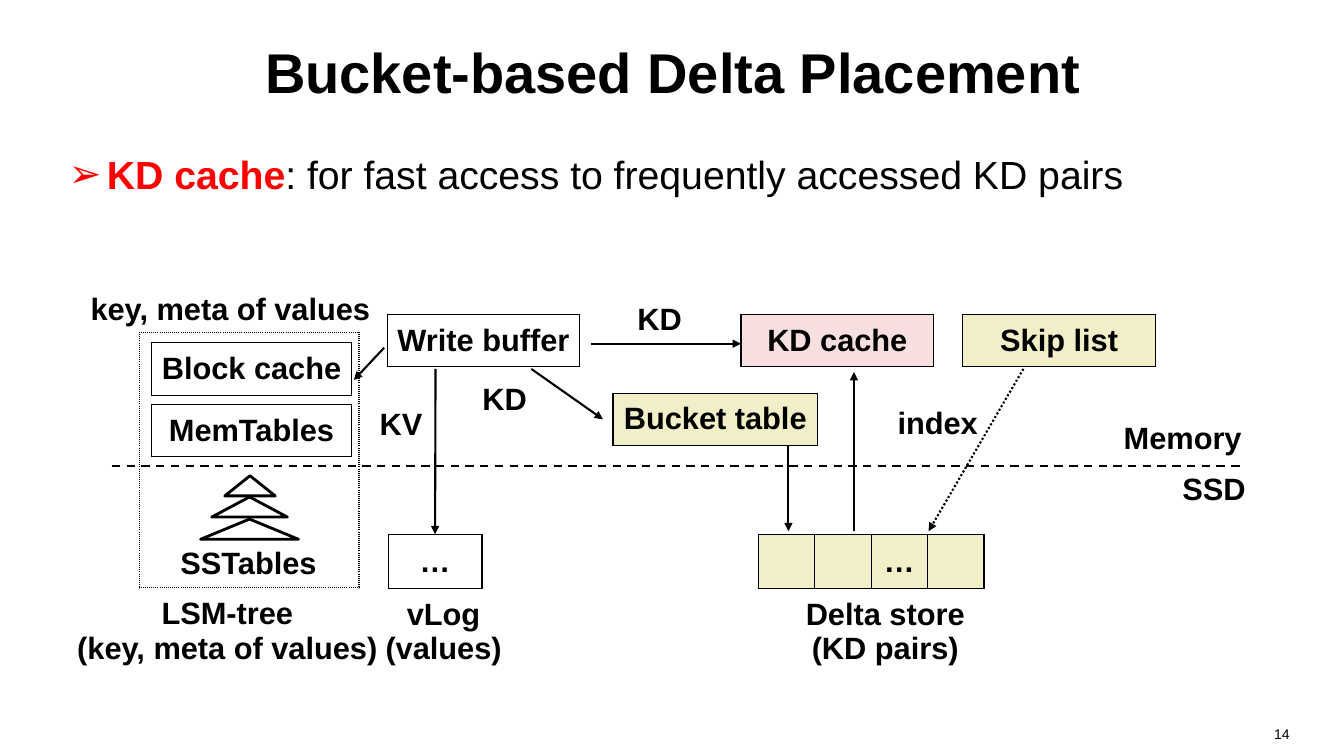
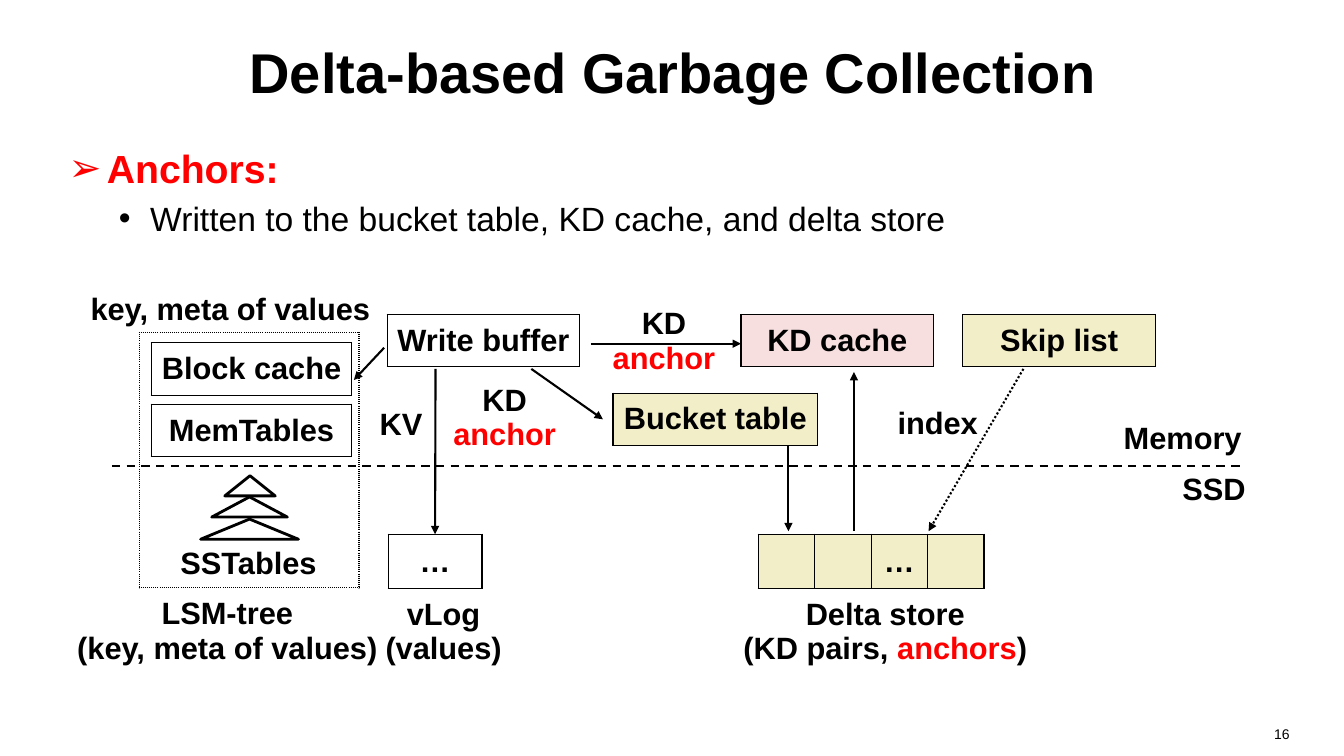
from pptx import Presentation
from pptx.dml.color import RGBColor
from pptx.enum.dml import MSO_LINE
from pptx.enum.shapes import MSO_CONNECTOR, MSO_SHAPE
from pptx.enum.text import MSO_ANCHOR, MSO_AUTO_SIZE, PP_ALIGN
from pptx.oxml import parse_xml
from pptx.oxml.ns import nsdecls
from pptx.util import Emu, Pt

STRAIGHT = MSO_CONNECTOR.STRAIGHT
TRIANGLE = MSO_SHAPE.ISOSCELES_TRIANGLE
DASH, DOTTED = MSO_LINE.DASH, MSO_LINE.ROUND_DOT
LEFT, CENTER, RIGHT = PP_ALIGN.LEFT, PP_ALIGN.CENTER, PP_ALIGN.RIGHT
MIDDLE, TOP = MSO_ANCHOR.MIDDLE, MSO_ANCHOR.TOP
NO_AUTOFIT = MSO_AUTO_SIZE.NONE

FONT = "Arial"
BLACK, RED, PINK, CREAM = "000000", "FF0000", "F7DFDF", "F2EEC8"
EMU_PER_PX = 9144
TITLE_AND_CONTENT = 1
TOP_SIDE = 0
BOX_TOP, BOX_WIDTH, BOX_HEIGHT = 312, 191, 52
LABEL_HEIGHT, CAPTION_HEIGHT = 37, 73
STORE_TOP, STORE_HEIGHT = 530, 54


def px(length):
    """Turn px into EMU."""
    return Emu(length * EMU_PER_PX)


def rgb(color):
    """Turn a hex string into a colour."""
    return RGBColor.from_string(color)


def place(shape, left, top, width, height):
    """Set the position and size of a shape."""
    shape.left, shape.top = px(left), px(top)
    shape.width, shape.height = px(width), px(height)


def write(para, text, size=22, bold=True, accent="", align=CENTER):
    """Write text into a paragraph, with the accent words in bold red."""
    para.alignment = align
    before, marked, after = text.partition(accent) if accent else (text, "", "")
    for part, color, weight in ((before, BLACK, bold), (marked, RED, True),
                                (after, BLACK, bold)):
        if part:
            span = para.add_run()
            span.text = part
            span.font.name, span.font.size = FONT, Pt(size)
            span.font.bold = weight
            span.font.color.rgb = rgb(color)


def add_bullet(para, mark, margin, hang):
    """Give a paragraph a bullet with a hanging indent."""
    properties = para._p.get_or_add_pPr()
    properties.set("marL", str(px(margin)))
    properties.set("indent", str(-px(hang)))
    properties.append(parse_xml(f'<a:buFont {nsdecls("a")} typeface="{FONT}"/>'))
    properties.append(parse_xml(f'<a:buChar {nsdecls("a")} char="{mark}"/>'))


def set_borders(cell, border):
    """Draw the four cell borders, or clear them when border is None."""
    if border:
        content = (f'<a:solidFill><a:srgbClr val="{BLACK}"/></a:solidFill>'
                   f'<a:prstDash val="{border}"/>')
    else:
        content = "<a:noFill/>"
    properties = cell._tc.get_or_add_tcPr()
    for index, side in enumerate("LRTB"):
        properties.insert(index, parse_xml(
            f'<a:ln{side} {nsdecls("a")} w="{Pt(1)}">{content}</a:ln{side}>'))


def add_cells(page, texts, left, top, width, height,
              fill=None, border="solid", accent=""):
    """Add a one-row table with one cell per text."""
    frame = page.shapes.add_table(1, len(texts), px(left), px(top),
                                  px(width), px(height))
    table = frame.table
    table.first_row = table.horz_banding = False
    for cell, text in zip(table.rows[0].cells, texts):
        cell.margin_left = cell.margin_right = 0
        cell.margin_top = cell.margin_bottom = 0
        cell.vertical_anchor = MIDDLE
        if fill:
            cell.fill.solid()
            cell.fill.fore_color.rgb = rgb(fill)
        else:
            cell.fill.background()
        set_borders(cell, border)
        for index, line in enumerate(text.split("\n")):
            paras = cell.text_frame
            para = paras.add_paragraph() if index else paras.paragraphs[0]
            write(para, line, accent=accent)
    return frame


def add_label(page, text, left, top, width, height=LABEL_HEIGHT, accent=""):
    """Add a borderless label."""
    add_cells(page, [text], left, top, width, height, border=None, accent=accent)


def add_line(page, start, end, dash=None, arrow=True):
    """Add a straight line, with an arrowhead at its end if wanted."""
    connector = page.shapes.add_connector(
        STRAIGHT, *(px(value) for value in start + end))
    line = connector.line
    line.width = Pt(1.5)
    line.color.rgb = rgb(BLACK)
    if dash:
        line.dash_style = dash
    if arrow:
        line._get_or_add_ln().append(
            parse_xml(f'<a:tailEnd {nsdecls("a")} type="triangle"/>'))
    connector._element.spPr.append(parse_xml(f'<a:effectLst {nsdecls("a")}/>'))
    return connector


def add_triangle(page, left, top, width):
    """Add one outlined level of the tree."""
    shape = page.shapes.add_shape(TRIANGLE, px(left), px(top), px(width), px(20))
    shape.shadow.inherit = False
    shape.fill.background()
    shape.line.color.rgb = rgb(BLACK)
    shape.line.width = Pt(2)


def add_page(deck, title, number):
    """Add a slide with its title and number, and return it with its body."""
    page = deck.slides.add_slide(deck.slide_layouts[TITLE_AND_CONTENT])
    heading, body = page.placeholders
    place(heading, 67, 8, 1200, 125)
    place(body, 58, 138, 1230, 154)
    for holder, anchor in ((heading, MIDDLE), (body, TOP)):
        holder.text_frame.auto_size = NO_AUTOFIT
        holder.text_frame.vertical_anchor = anchor
    write(heading.text_frame.paragraphs[0], title, size=40)
    box = page.shapes.add_textbox(px(978), px(715), px(311), px(35))
    box.text_frame.word_wrap = True
    write(box.text_frame.paragraphs[0], number, size=10, bold=False, align=RIGHT)
    return page, body.text_frame


def add_point(body, text, accent, spacing=1.0):
    """Write the main point of the body."""
    para = body.paragraphs[0]
    write(para, text, size=28, bold=False, accent=accent, align=LEFT)
    para.space_before, para.line_spacing = Pt(3), spacing
    add_bullet(para, "➢", 38, 38)


def add_subpoint(body, text):
    """Add a second-level point to the body."""
    para = body.add_paragraph()
    para.level = 1
    write(para, text, size=24, bold=False, align=LEFT)
    para.space_before = Pt(5)
    add_bullet(para, "•", 81, 31)


def draw_lsm_tree(page):
    """Draw the tree in its dotted frame."""
    add_cells(page, [""], 138, 330, 218, 253, border="sysDot")
    for text, top in (("Block cache", 340), ("MemTables", 401)):
        add_cells(page, [text], 150, top, 199, BOX_HEIGHT)
    for left, top, width in ((223, 472, 50), (210, 493, 75), (199, 515, 97)):
        add_triangle(page, left, top, width)
    add_label(page, "SSTables", 157, 536, 179, 47)
    add_label(page, "LSM-tree\n(key, meta of values)", 75, 585, 301, 83)


def draw_architecture(page):
    """Draw the parts that both diagrams share."""
    draw_lsm_tree(page)
    for text, left, fill in (("Write buffer", 384, None), ("KD cache", 735, PINK),
                             ("Skip list", 955, CREAM)):
        add_cells(page, [text], left, BOX_TOP, BOX_WIDTH, BOX_HEIGHT, fill)
    add_cells(page, ["Bucket table"], 608, 390, 203, BOX_HEIGHT, CREAM)
    value_log = add_cells(page, ["…"], 385, STORE_TOP, 93, STORE_HEIGHT)
    add_cells(page, ["", "", "…", ""], 752, STORE_TOP, 224, STORE_HEIGHT, CREAM)
    add_label(page, "vLog\n(values)", 381, 590, 118, CAPTION_HEIGHT)
    for text, left, top, width in (
            ("key, meta of values", 75, 289, 307), ("KV ", 369, 403, 66),
            ("index", 883, 402, 94), ("Memory", 1108, 417, 130),
            ("SSD", 1170, 467, 68)):
        add_label(page, text, left, top, width)
    add_line(page, (111, 462), (1235, 462), DASH, arrow=False)
    for start, end in (((586, 341), (735, 341)), ((847, 527), (847, 369)),
                       ((381, 345), (351, 377)), ((527, 366), (598, 416)),
                       ((782, 442), (782, 527))):
        add_line(page, start, end)
    add_line(page, (1015, 366), (921, 527), DOTTED)
    write_arrow = add_line(page, (432, 366), (432, STORE_TOP))
    write_arrow.end_connect(value_log, TOP_SIDE)


def draw_placement(deck):
    """Build the slide on delta placement."""
    page, body = add_page(deck, "Bucket-based Delta Placement", "14")
    add_point(body, "KD cache: for fast access to frequently accessed KD pairs",
              "KD cache", spacing=1.14)
    draw_architecture(page)
    add_label(page, "KD ", 624, 299, 69)
    add_label(page, "KD", 448, 378, 105)
    add_label(page, "Delta store\n(KD pairs)", 732, 590, 292, CAPTION_HEIGHT)


def draw_collection(deck):
    """Build the slide on garbage collection."""
    page, body = add_page(deck, "Delta-based Garbage Collection", "16")
    add_point(body, "Anchors:", "Anchors:")
    add_subpoint(body, "Written to the bucket table, KD cache, and delta store")
    draw_architecture(page)
    for text, left, top, width, accent in (
            ("KD\nanchor", 592, 302, 133, "anchor"),
            ("KD\nanchor", 448, 378, 105, "anchor"),
            ("Delta store\n(KD pairs, anchors)", 732, 590, 292, "anchors")):
        add_label(page, text, left, top, width, CAPTION_HEIGHT, accent)


def main():
    """Build and save the deck."""
    deck = Presentation()
    deck.slide_width, deck.slide_height = px(1333), px(750)
    draw_placement(deck)
    draw_collection(deck)
    deck.save("out.pptx")


if __name__ == "__main__":
    main()
